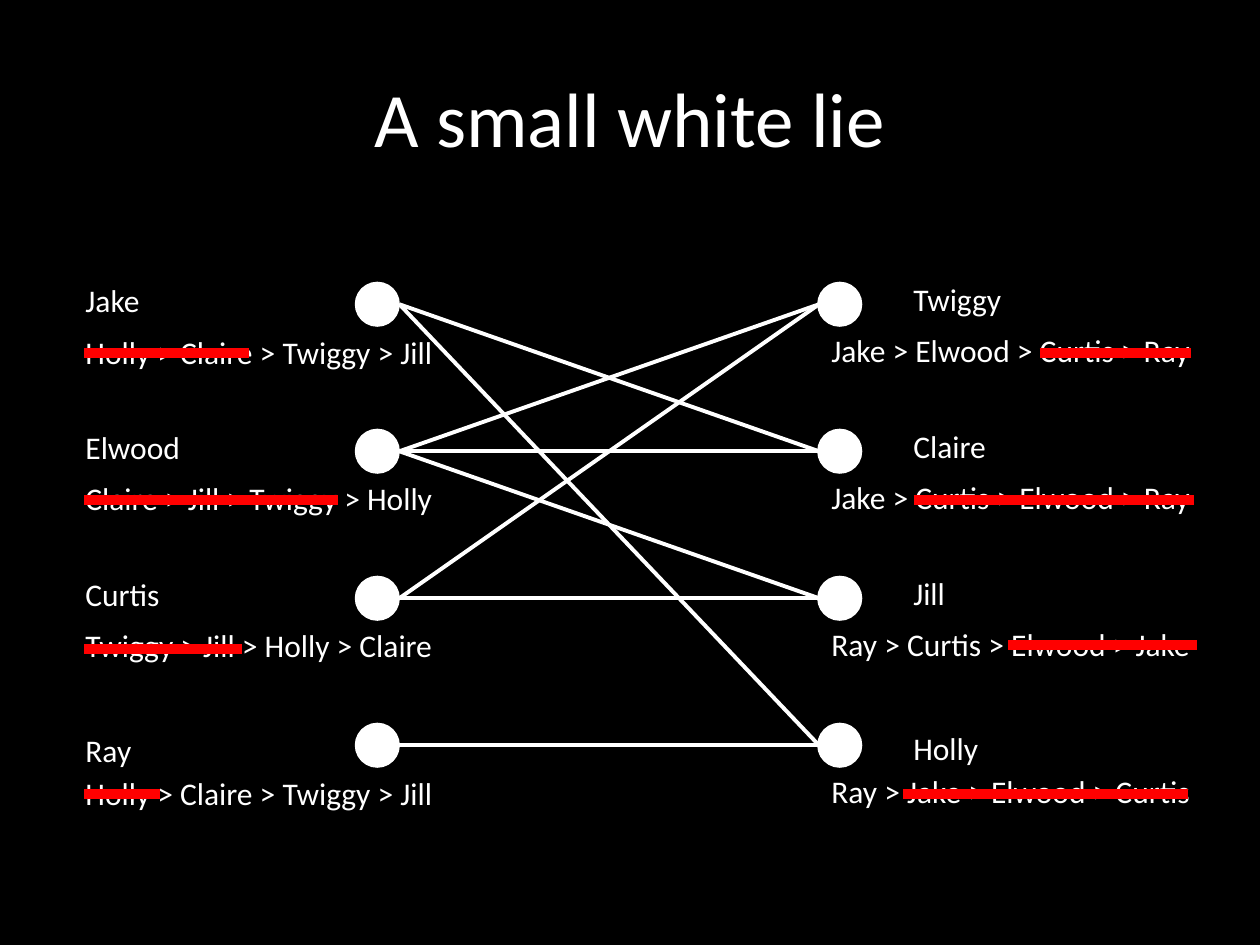
from lxml.etree import SubElement
from pptx import Presentation
from pptx.dml.color import RGBColor
from pptx.enum.shapes import MSO_CONNECTOR, MSO_SHAPE
from pptx.enum.text import MSO_ANCHOR, MSO_AUTO_SIZE, PP_ALIGN
from pptx.oxml.ns import qn
from pptx.util import Inches, Pt

BLACK = RGBColor(0x00, 0x00, 0x00)
WHITE = RGBColor(0xFF, 0xFF, 0xFF)
RED = RGBColor(0xFF, 0x00, 0x00)

TITLE = "A small white lie"
LEFT_PEOPLE = [
    ("Jake", 0.64, "Holly > Claire > Twiggy > Jill", 2.8, [(0.67, 1.17), (1.08, 1.98)]),
    ("Elwood", 0.96, "Claire > Jill > Twiggy > Holly", 3.97,
     [(0.67, 1.27), (0.83, 1.73), (1.58, 2.68)]),
    ("Curtis", 0.8, "Twiggy > Jill > Holly > Claire", 5.15, [(0.67, 1.37), (1.22, 1.92)]),
    ("Ray", 0.57, "Holly > Claire > Twiggy > Jill", 6.3, [(0.67, 1.27)]),
]
RIGHT_PEOPLE = [
    ("Twiggy", 0.91, "Jake > Elwood > Curtis > Ray", 2.8, [(8.25, 9.45)]),
    ("Claire", 0.78, "Jake > Curtis > Elwood > Ray", 3.97, [(7.25, 9.15), (9.08, 9.48)]),
    ("Jill", 0.46, "Ray > Curtis > Elwood > Jake", 5.12, [(8, 9.2), (9, 9.5)]),
    ("Holly", 0.72, "Ray > Jake > Elwood > Curtis", 6.3, [(7.17, 8.77), (7.83, 9.43)]),
]
SIDES = [
    {"people": LEFT_PEOPLE, "node": 2.83, "name": 0.58, "list": 0.58,
     "width": 3, "name_rise": 0.07, "list_drop": 0.34},
    {"people": RIGHT_PEOPLE, "node": 6.5, "name": 7.15, "list": 6.5,
     "width": 3.3, "name_rise": 0.08, "list_drop": 0.33},
]
PAIRS = [
    ("Jake", "Holly"), ("Jake", "Claire"), ("Elwood", "Claire"),
    ("Elwood", "Jill"), ("Elwood", "Twiggy"), ("Curtis", "Twiggy"),
    ("Curtis", "Jill"), ("Ray", "Holly"),
]
FIRST_ROW = 2.25
ROW_GAP = 3.5 / 3
NODE_SIZE = 0.33
LAST_NAME_DROP = 0.07
TEXT_HEIGHT = 0.4


def add_text(slide, text, left, top, width, height, size=18, wrap=True,
             fit=MSO_AUTO_SIZE.SHAPE_TO_FIT_TEXT,
             alignment=PP_ALIGN.LEFT, anchor=MSO_ANCHOR.TOP):
    box = slide.shapes.add_textbox(*map(Inches, (left, top, width, height)))
    frame_format = {"word_wrap": wrap, "auto_size": fit, "vertical_anchor": anchor}
    for attribute, value in frame_format.items():
        setattr(box.text_frame, attribute, value)
    paragraph = box.text_frame.paragraphs[0]
    paragraph.alignment = alignment
    run = paragraph.add_run()
    run.text = text
    for attribute, value in {"name": "Calibri", "size": Pt(size)}.items():
        setattr(run.font, attribute, value)
    run.font.color.rgb = WHITE


def add_line(slide, start, end, color, width):
    line = slide.shapes.add_connector(
        MSO_CONNECTOR.STRAIGHT, *map(Inches, (*start, *end)))
    line.line.color.rgb = color
    line.line.width = Pt(width)
    SubElement(line._element.spPr, qn("a:effectLst"))


def add_node(slide, left, top):
    node = slide.shapes.add_shape(
        MSO_SHAPE.OVAL, *map(Inches, (left, top, NODE_SIZE, NODE_SIZE)))
    node.shadow.inherit = False
    node.fill.solid()
    node.fill.fore_color.rgb = WHITE
    node.line.color.rgb = WHITE
    node.line.width = Pt(2)


def main():
    presentation = Presentation()
    presentation.slide_width = Inches(10)
    presentation.slide_height = Inches(7.5)
    slide = presentation.slides.add_slide(presentation.slide_layouts[6])
    slide.background.fill.solid()
    slide.background.fill.fore_color.rgb = BLACK
    add_text(slide, TITLE, 0.5, 0.3, 9, 1.25, size=44, fit=MSO_AUTO_SIZE.NONE,
             alignment=PP_ALIGN.CENTER, anchor=MSO_ANCHOR.MIDDLE)

    row_of = {}
    for side in SIDES:
        for row, (name, name_width, preferences, _, _) in enumerate(side["people"]):
            row_of[name] = row
            top = FIRST_ROW + row * ROW_GAP
            is_last = row == len(side["people"]) - 1
            name_top = top - side["name_rise"] + is_last * LAST_NAME_DROP
            add_node(slide, side["node"], top)
            add_text(slide, name, side["name"], name_top, name_width, TEXT_HEIGHT,
                     wrap=False)
            add_text(slide, preferences, side["list"], top + side["list_drop"],
                     side["width"], TEXT_HEIGHT)

    def node_middle(name):
        return FIRST_ROW + row_of[name] * ROW_GAP + NODE_SIZE / 2

    for left_name, right_name in PAIRS:
        add_line(slide, (3.17, node_middle(left_name)),
                 (6.5, node_middle(right_name)), WHITE, 2.25)

    for _, _, _, height, spans in LEFT_PEOPLE + RIGHT_PEOPLE:
        for start, end in spans:
            add_line(slide, (start, height), (end, height), RED, 6)

    presentation.save("out.pptx")


if __name__ == "__main__":
    main()
